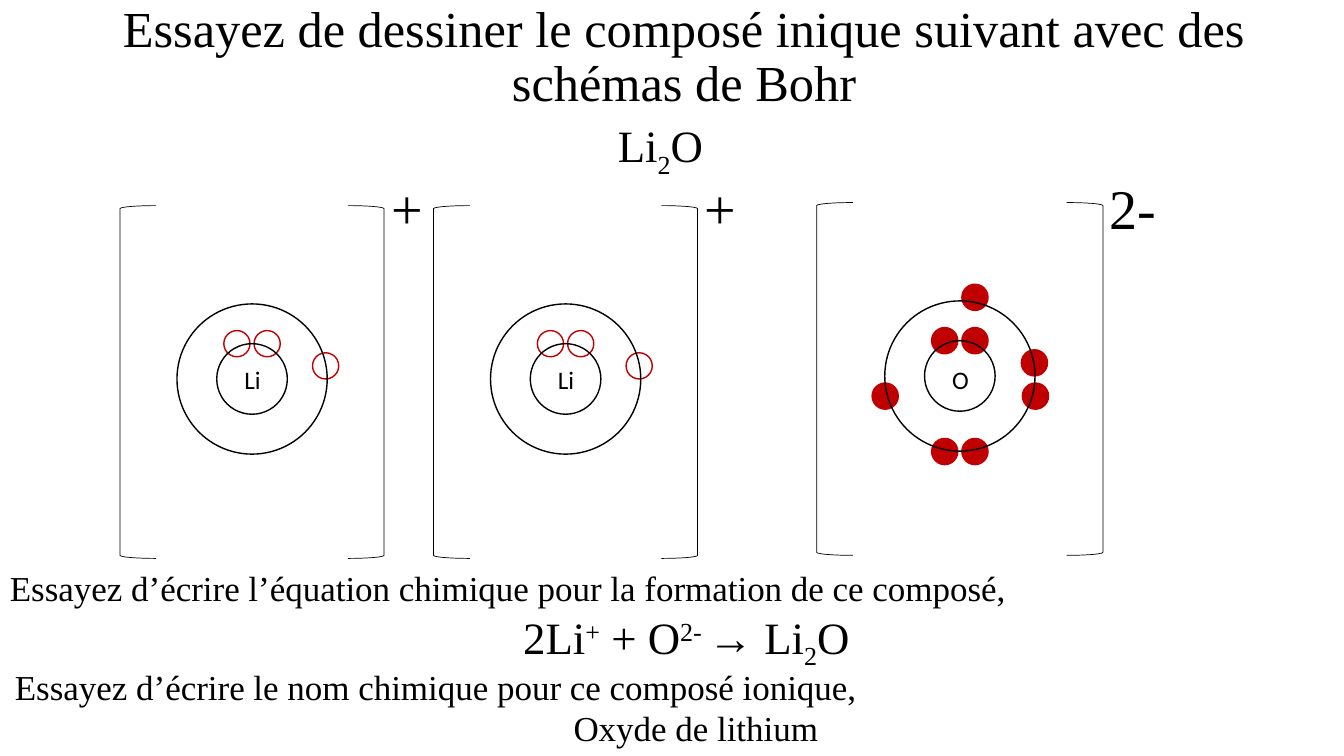
from pptx import Presentation
from pptx.dml.color import RGBColor
from pptx.enum import shapes, text
from pptx.util import Inches, Pt

BLACK = RGBColor(0x00, 0x00, 0x00)
WHITE = RGBColor(0xFF, 0xFF, 0xFF)
RED = RGBColor(0xC0, 0x00, 0x00)
SERIF = "Times New Roman"
SANS = "Calibri"
SUB, SUPER = -25000, 30000

ELECTRON, INNER, OUTER = 0.26, 0.7, 1.49  # diameters
BRACKET_WIDTH, BRACKET_HEIGHT = 0.36, 3.5

# Electron centres, measured from the nucleus
INNER_PAIR = [(-0.15, -0.35), (0.15, -0.35)]
LITHIUM = INNER_PAIR + [(0.73, -0.13)]
OXYGEN = INNER_PAIR + [(0.15, 0.75), (0.74, -0.13), (-0.74, 0.2),
                       (-0.15, 0.75), (0.75, 0.2), (0.15, -0.78)]


def add_text(page, spans, left, top, width, height, size, font=SERIF,
             align=text.PP_ALIGN.LEFT, anchor=text.MSO_ANCHOR.TOP,
             wrap=False, spacing=None):
    """Add one paragraph; spans is a string or (string, baseline) pairs."""
    box = page.shapes.add_textbox(Inches(left), Inches(top),
                                  Inches(width), Inches(height))
    frame = box.text_frame
    frame.word_wrap = wrap
    frame.vertical_anchor = anchor
    if not wrap:
        frame.auto_size = text.MSO_AUTO_SIZE.SHAPE_TO_FIT_TEXT
    para = frame.paragraphs[0]
    para.alignment = align
    para.line_spacing = spacing
    for words, baseline in [(spans, 0)] if isinstance(spans, str) else spans:
        span = para.add_run()
        span.text = words
        span.font.size = Pt(size)
        span.font.name = font
        span.font.color.rgb = BLACK
        if baseline:
            span.font._element.set("baseline", str(baseline))


def add_outline(page, kind, left, top, width, height, line=BLACK, weight=1,
                fill=None):
    shape = page.shapes.add_shape(kind, Inches(left), Inches(top),
                                  Inches(width), Inches(height))
    shape.shadow.inherit = False
    if fill is None:
        shape.fill.background()
    else:
        shape.fill.solid()
        shape.fill.fore_color.rgb = fill
    shape.line.color.rgb = line
    shape.line.width = Pt(weight)
    return shape


def add_circle(page, x, y, diameter, **look):
    add_outline(page, shapes.MSO_SHAPE.OVAL, x - diameter / 2,
                y - diameter / 2, diameter, diameter, **look)


def add_bracket(page, left, top, flipped=False):
    bracket = add_outline(page, shapes.MSO_SHAPE.LEFT_BRACKET, left, top,
                          BRACKET_WIDTH, BRACKET_HEIGHT, weight=0.5)
    if flipped:
        bracket._element.spPr.xfrm.set("flipH", "1")


def add_ion(page, symbol, charge, x, y, half_width, electrons, fill,
            charge_width):
    """Draw a Bohr diagram centred on x, y between brackets."""
    add_text(page, symbol, x - 0.18, 3.57, 0.37, 0.4, 18, font=SANS,
             align=text.PP_ALIGN.CENTER)
    for dx, dy in electrons:
        add_circle(page, x + dx, y + dy, ELECTRON, line=RED, fill=fill)
    for diameter in (INNER, OUTER):
        add_circle(page, x, y, diameter)
    top = y - 1.72
    add_bracket(page, x - half_width, top)
    add_bracket(page, x + half_width - BRACKET_WIDTH, top, flipped=True)
    add_text(page, charge, x + half_width - 0.03, 1.67, charge_width, 0.77, 40)


def main():
    deck = Presentation()
    deck.slide_width, deck.slide_height = Inches(13.33), Inches(7.5)
    page = deck.slides.add_slide(deck.slide_layouts[6])

    # Title and formula
    centred = dict(align=text.PP_ALIGN.CENTER, wrap=True, spacing=0.9)
    add_text(page, "Essayez de dessiner le composé inique suivant avec des "
             "schémas de Bohr", 0.24, 0.12, 13.09, 0.91, 36,
             anchor=text.MSO_ANCHOR.MIDDLE, **centred)
    add_text(page, [("Li", 0), ("2", SUB), ("O", 0)],
             0.8, 1.13, 11.5, 0.74, 32, **centred)

    # Ions
    for x in (2.5, 5.61):
        add_ion(page, "Li", "+", x, 3.76, 1.31, LITHIUM, WHITE, 0.52)
    add_ion(page, "O", "2-", 9.52, 3.73, 1.42, OXYGEN, RED, 0.67)

    # Equation and name
    add_text(page, "Essayez d’écrire l’équation chimique pour la formation "
             "de ce composé,", 0, 5.57, 10.21, 0.52, 25)
    add_text(page, [("2Li", 0), ("+", SUPER), (" + O", 0), ("2- ", SUPER),
                    ("→ Li", 0), ("2", SUB), ("O", 0)],
             5.09, 6, 3.59, 0.64, 32)
    add_text(page, "Essayez d’écrire le nom chimique pour ce composé ionique,",
             0.05, 6.55, 8.66, 0.52, 25)
    add_text(page, "Oxyde de lithium", 5.59, 6.96, 2.66, 0.52, 25)

    deck.save("out.pptx")


if __name__ == "__main__":
    main()
